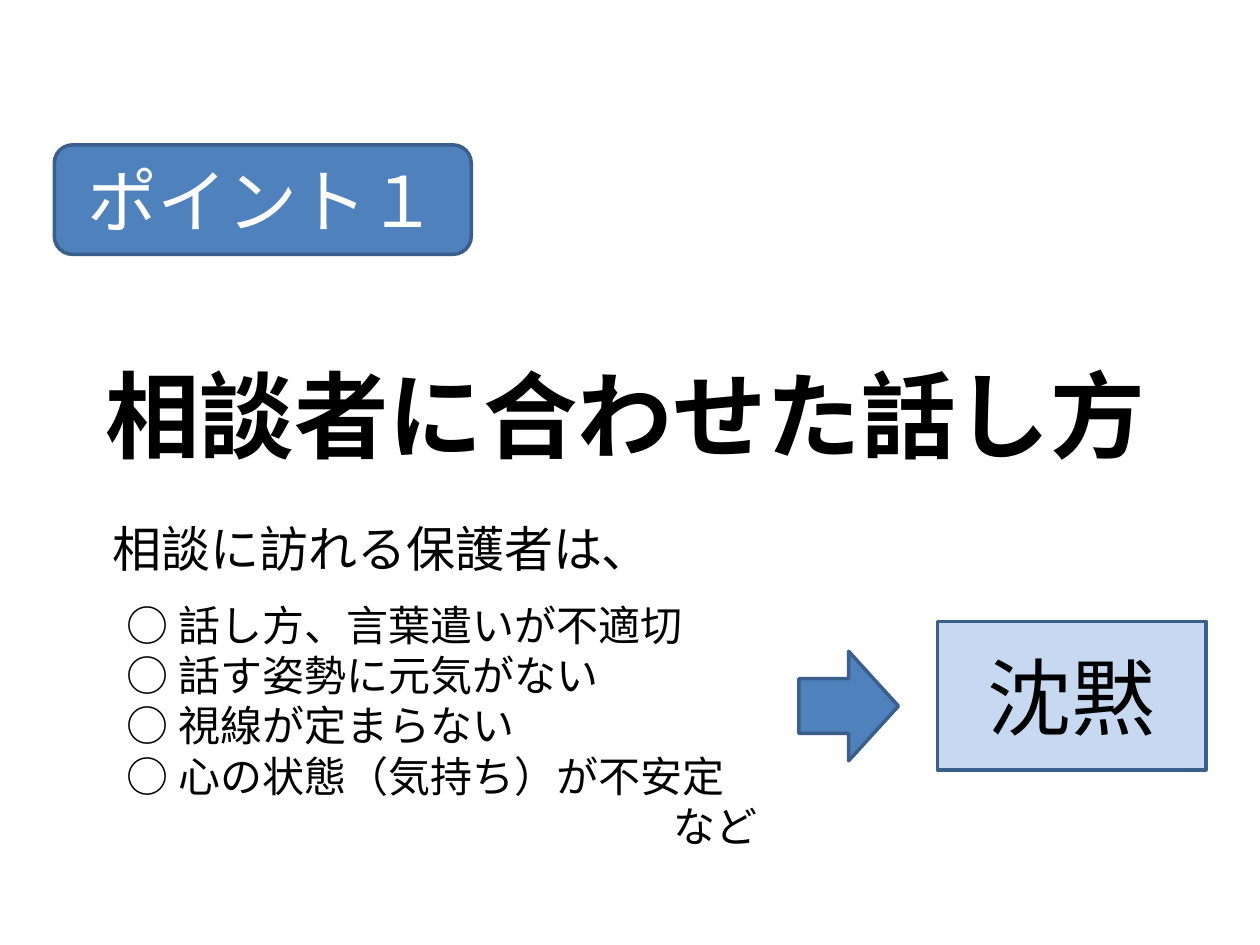
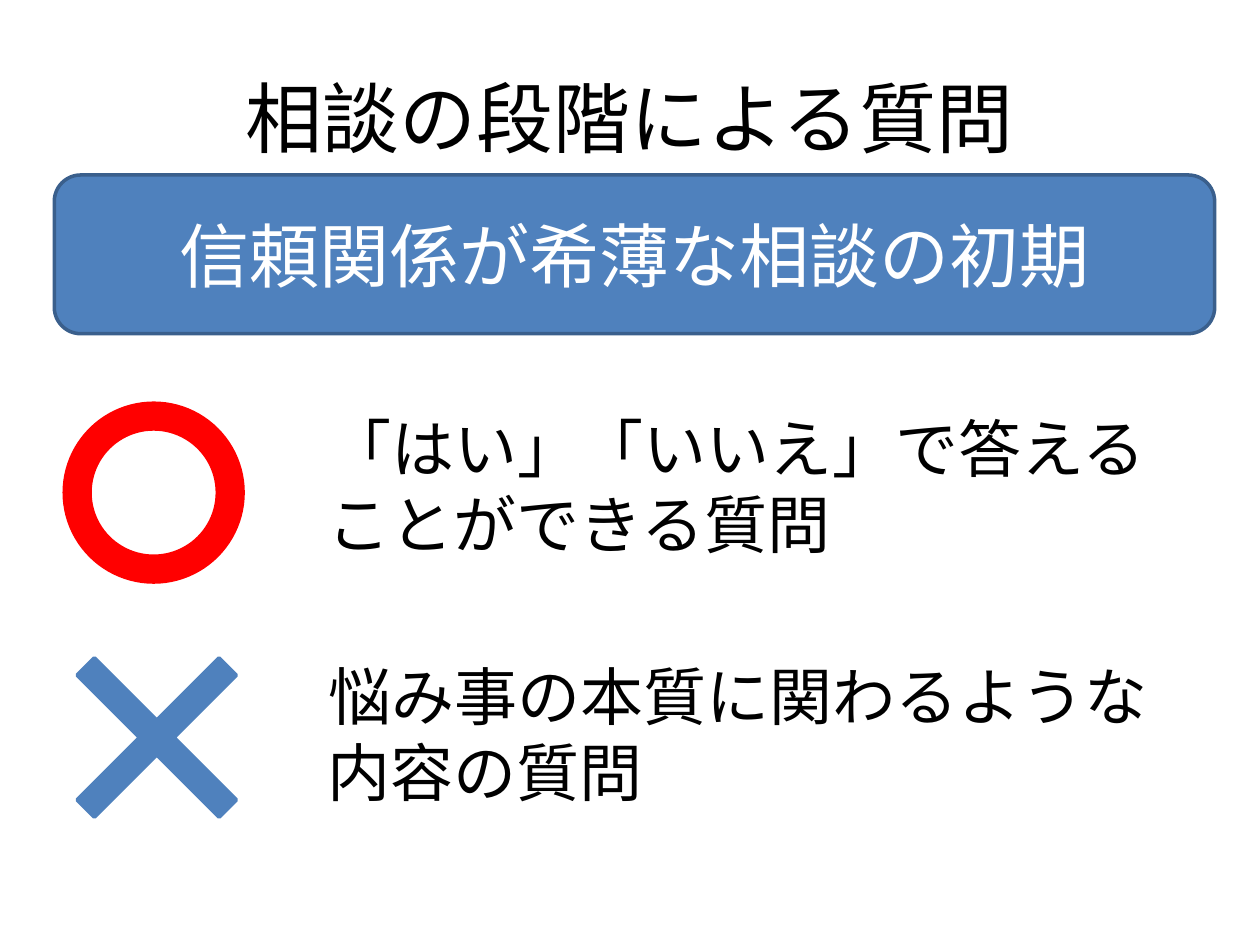
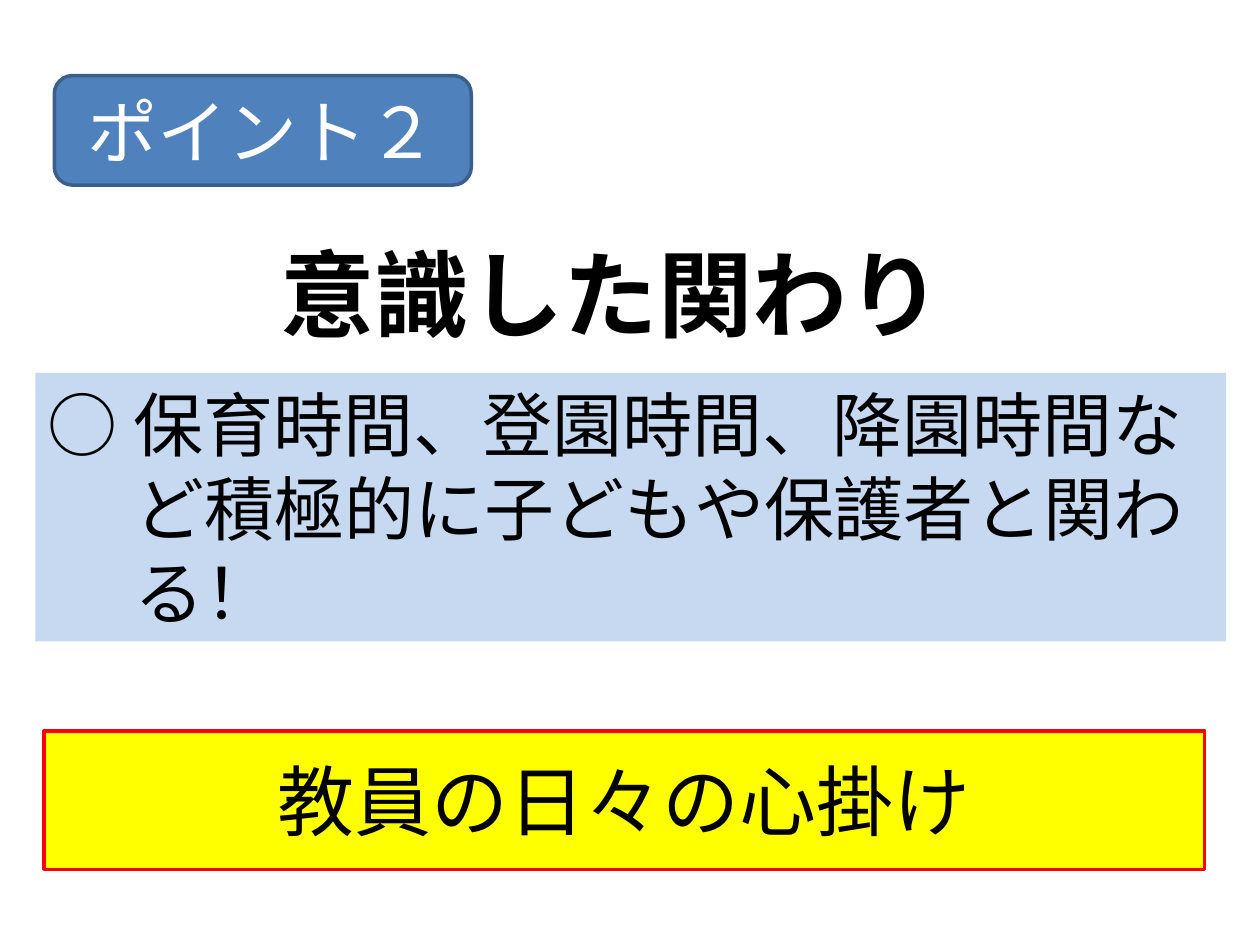
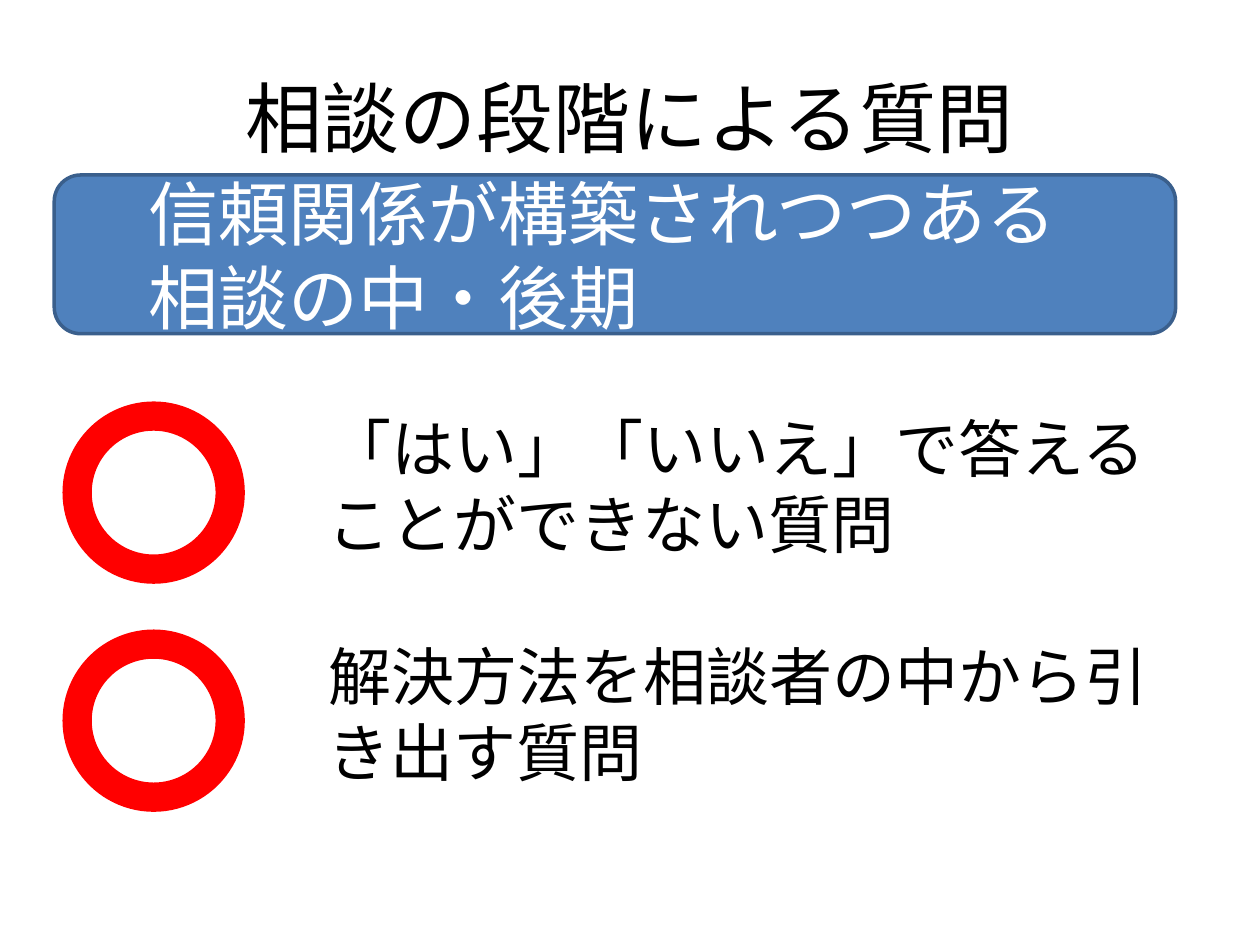
"""Build four slides on how to talk with parents who come for advice."""
from dataclasses import dataclass, replace
from typing import Optional

from lxml.etree import SubElement
from pptx import Presentation
from pptx.dml.color import RGBColor
from pptx.enum.shapes import MSO_SHAPE as Preset
from pptx.enum.text import MSO_ANCHOR as Anchor, PP_ALIGN as Align
from pptx.oxml.ns import qn
from pptx.shapes.autoshape import Shape
from pptx.slide import Slide
from pptx.util import Pt


@dataclass(frozen=True)
class Theme:
    font: str = "Noto Sans CJK JP"
    black: str = "000000"
    white: str = "FFFFFF"
    blue: str = "4F81BD"
    edge: str = "3A5F8C"
    pale: str = "C6D9F1"
    red: str = "FF0000"
    yellow: str = "FFFF00"
    headline: int = 54
    keyword: int = 48
    title: int = 44
    band: int = 40
    answer: int = 36
    lead: int = 28
    item: int = 24
    stroke: int = 2


@dataclass(frozen=True)
class Box:
    left: float
    top: float
    width: float
    height: float

    def lengths(self) -> tuple[Pt, Pt, Pt, Pt]:
        return Pt(self.left), Pt(self.top), Pt(self.width), Pt(self.height)


@dataclass(frozen=True)
class TextStyle:
    size: int
    color: str
    align: Align = Align.CENTER
    anchor: Anchor = Anchor.MIDDLE
    bold: bool = False
    indent: float = 0
    hanging: float = 0
    before: float = 0
    leading: Optional[float] = None


@dataclass(frozen=True)
class Paint:
    fill: str
    line: Optional[str] = None


@dataclass(frozen=True)
class Question:
    mark: str
    top: float
    width: float
    text: str


THEME = Theme()
LEFT_EDGE = 31
MARK_SIZE = 102.2
ANSWER_LEFT = 144.7
BLUE_PAINT = Paint(THEME.blue, THEME.edge)
PALE_PAINT = Paint(THEME.pale, THEME.edge)

HEADLINE = TextStyle(THEME.headline, THEME.black, bold=True)
TITLE = TextStyle(THEME.title, THEME.black)
BAND = TextStyle(THEME.band, THEME.white)
KEYWORD = TextStyle(THEME.keyword, THEME.black)
LEAD = TextStyle(THEME.lead, THEME.black)
ITEM = TextStyle(THEME.item, THEME.black, Align.LEFT)
ANSWER = TextStyle(THEME.answer, THEME.black, Align.LEFT, Anchor.TOP,
                   indent=35.3, hanging=35.3, before=0.2 * THEME.answer)
ADVICE = TextStyle(THEME.band, THEME.black, Align.LEFT,
                   indent=49.7, hanging=49.7, before=12)


def write(shape: Shape, lines: list[str], style: TextStyle) -> None:
    """Fill a shape with one paragraph for each line."""
    frame = shape.text_frame
    frame.word_wrap = True
    frame.vertical_anchor = style.anchor
    frame.text = "\n".join(lines)
    for paragraph in frame.paragraphs:
        paragraph.alignment = style.align
        paragraph.space_before = Pt(style.before)
        if style.leading:
            paragraph.line_spacing = style.leading
        font = paragraph.font
        font.name = THEME.font
        font.size = Pt(style.size)
        font.bold = style.bold
        font.color.rgb = RGBColor.from_string(style.color)
        properties = paragraph._p.get_or_add_pPr()
        properties.set("marL", str(Pt(style.indent)))
        properties.set("indent", str(-Pt(style.hanging)))
        east_asian = SubElement(properties.find(qn("a:defRPr")), qn("a:ea"))
        east_asian.set("typeface", THEME.font)


def add_text(slide: Slide, box: Box, lines: list[str], style: TextStyle) -> Shape:
    """Add a wrapped text box."""
    text = slide.shapes.add_textbox(*box.lengths())
    write(text, lines, style)
    return text


def add_preset(slide: Slide, preset: Preset, box: Box, paint: Paint,
               adjustment: Optional[float] = None) -> Shape:
    """Add a flat preset shape."""
    shape = slide.shapes.add_shape(preset, *box.lengths())
    shape.shadow.inherit = False
    shape.fill.solid()
    shape.fill.fore_color.rgb = RGBColor.from_string(paint.fill)
    if paint.line:
        shape.line.color.rgb = RGBColor.from_string(paint.line)
        shape.line.width = Pt(THEME.stroke)
    else:
        shape.line.fill.background()
    if adjustment is not None:
        shape.adjustments[0] = adjustment
    return shape


def add_panel(slide: Slide, preset: Preset, box: Box, paint: Paint,
              lines: list[str], style: TextStyle) -> None:
    """Add a preset shape that carries text."""
    write(add_preset(slide, preset, box, paint), lines, style)


def add_point_label(slide: Slide, top: float, label: str) -> None:
    """Add the rounded label that numbers a point."""
    add_panel(slide, Preset.ROUNDED_RECTANGLE, Box(LEFT_EDGE, top, 238.3, 62.6),
              BLUE_PAINT, [label], BAND)


def add_question(slide: Slide, question: Question) -> None:
    """Add a suitable or unsuitable mark with its kind of question."""
    add_text(slide, Box(ANSWER_LEFT, question.top, question.width, MARK_SIZE),
             [question.text], ANSWER)
    if question.mark == "good":
        add_preset(slide, Preset.DONUT,
                   Box(36.7, question.top, MARK_SIZE, MARK_SIZE),
                   Paint(THEME.red, THEME.red), 0.144)
    else:
        add_preset(slide, Preset.MATH_MULTIPLY,
                   Box(11.5, question.top - 28.8, 156.2, 156.2),
                   Paint(THEME.blue, THEME.blue), 0.09)


def build_stage(slide: Slide, band_width: float, stage: list[str],
                band_style: TextStyle, questions: list[Question]) -> None:
    """Build a slide on the questions that suit one stage of advice."""
    add_text(slide, Box(36, 21.6, 648, 90), ["相談の段階による質問"], TITLE)
    add_panel(slide, Preset.ROUNDED_RECTANGLE, Box(LEFT_EDGE, 100, band_width, 90.7),
              BLUE_PAINT, stage, band_style)
    for question in questions:
        add_question(slide, question)


def build_speaking(slide: Slide) -> None:
    """Build the slide on speaking to suit the visitor."""
    add_text(slide, Box(48.2, 167.8, 617.8, 102.2), ["相談者に合わせた話し方"],
             replace(HEADLINE, anchor=Anchor.TOP, leading=1.5,
                     before=0.2 * THEME.headline))
    add_point_label(slide, 82.8, "ポイント１")
    add_text(slide, Box(LEFT_EDGE, 287.3, 374.4, 51.1), ["相談に訪れる保護者は、"], LEAD)
    signs = ["話し方、言葉遣いが不適切", "話す姿勢に元気がない",
             "視線が定まらない", "心の状態（気持ち）が不安定"]
    sign_list = add_text(slide, Box(65.5, 337.7, 374.4, 153.4),
                         [f"○ {sign}" for sign in signs] + ["など"], ITEM)
    sign_list.text_frame.paragraphs[-1].alignment = Align.RIGHT
    add_panel(slide, Preset.RECTANGLE, Box(535.7, 355, 153.4, 85),
              PALE_PAINT, ["沈黙"], KEYWORD)
    add_preset(slide, Preset.RIGHT_ARROW, Box(456.5, 372.2, 56.9, 62.6), BLUE_PAINT)


def build_involvement(slide: Slide) -> None:
    """Build the slide on conscious involvement."""
    add_point_label(slide, 43.2, "ポイント２")
    add_text(slide, Box(25.2, 122.4, 648, 90), ["意識した関わり"], HEADLINE)
    add_panel(slide, Preset.RECTANGLE, Box(20.2, 213.1, 680.4, 153.4), Paint(THEME.pale),
              ["○ 保育時間、登園時間、降園時間など積極的に子どもや保護者と関わる！"], ADVICE)
    add_panel(slide, Preset.RECTANGLE, Box(25.2, 417.6, 663.1, 79.2),
              Paint(THEME.yellow, THEME.red), ["教員の日々の心掛け"], TITLE)


def main() -> None:
    """Build and save the presentation."""
    deck = Presentation()
    deck.slide_width, deck.slide_height = Pt(720), Pt(540)
    blank = deck.slide_layouts[6]
    build_speaking(deck.slides.add_slide(blank))
    build_stage(deck.slides.add_slide(blank), 663.1, ["信頼関係が希薄な相談の初期"], BAND, [
        Question("good", 230.4, 521.3, "　「はい」「いいえ」で答えることができる質問"),
        Question("bad", 372.2, 527, "　悩み事の本質に関わるような内容の質問"),
    ])
    build_involvement(deck.slides.add_slide(blank))
    build_stage(deck.slides.add_slide(blank), 640.8,
                ["信頼関係が構築されつつある", "相談の中・後期"],
                replace(BAND, align=Align.LEFT, indent=42.5), [
        Question("good", 230.4, 521.3, "　「はい」「いいえ」で答えることができない質問"),
        Question("good", 360.7, 527, "　解決方法を相談者の中から引き出す質問"),
    ])
    deck.save("out.pptx")


if __name__ == "__main__":
    main()
